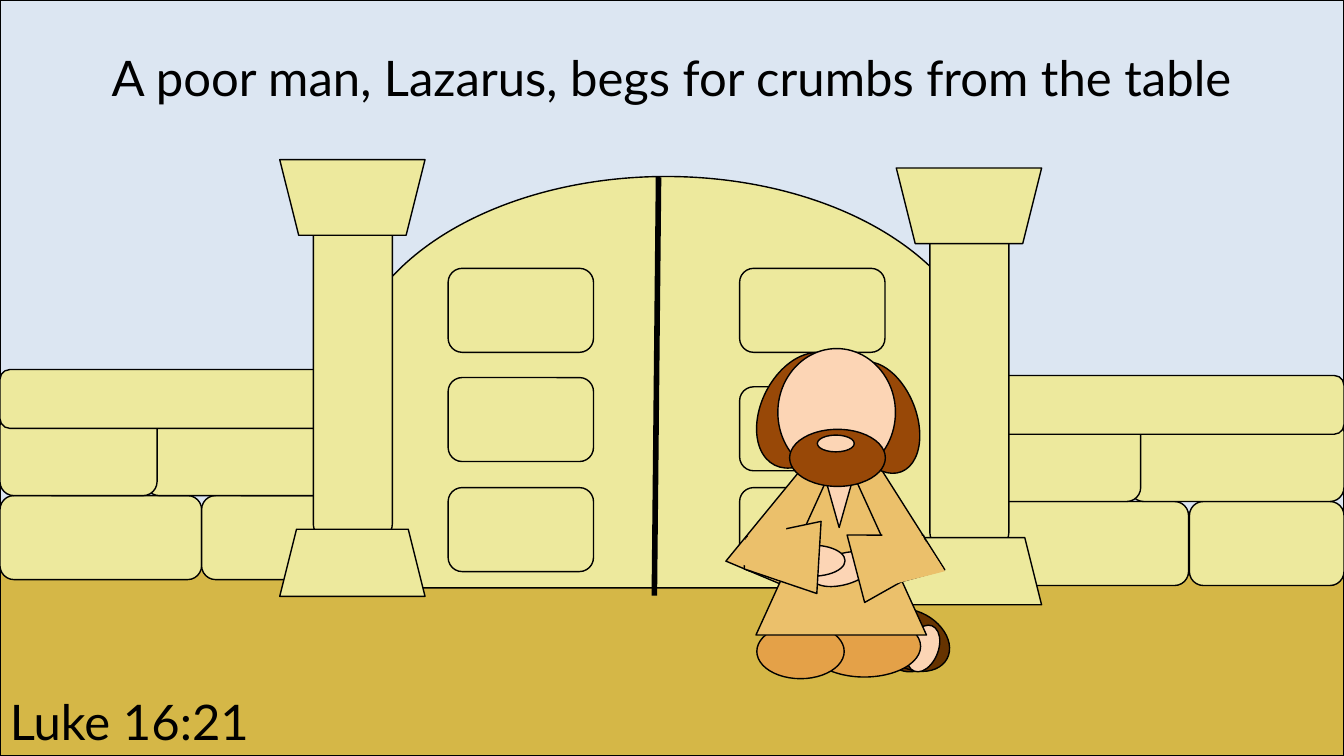
from dataclasses import dataclass

from lxml import etree
from pptx import Presentation
from pptx import util as u
from pptx.dml import color as col
from pptx.enum import shapes as sh, text as tx
from pptx.oxml import ns

COLS, ROWS = 160, 90
KIND = sh.MSO_SHAPE


@dataclass(frozen=True)
class Theme:
    sky: str = "DCE6F2"
    sand: str = "D5B747"
    stone: str = "EDE99D"
    ink: str = "000000"
    skin: str = "FCD5B5"
    robe: str = "EBC06B"
    knee: str = "E4A148"
    hair: str = "984807"
    shoe: str = "663300"
    font: str = "Lato"
    size: float = 35
    thin: float = 1
    thick: float = 4


class Scene:
    def __init__(self, deck, theme):
        self.theme = theme
        self.slide = deck.slides.add_slide(deck.slide_layouts[5])
        self.cell_w = deck.slide_width / COLS
        self.cell_h = deck.slide_height / ROWS
        self.layer = self.slide.shapes

    def spot(self, x, y):
        return u.Emu(round(x * self.cell_w)), u.Emu(round(y * self.cell_h))

    def box(self, x, y, w, h):
        return self.spot(x, y) + self.spot(w, h)

    def ink(self, line, width):
        line.color.rgb = col.RGBColor.from_string(self.theme.ink)
        line.width = u.Pt(width)

    def shape(self, kind, area, fill, turn=0, adjust=None, edge=True):
        item = self.layer.add_shape(kind, *self.box(*area))
        item.shadow.inherit = False
        item.rotation = turn
        item.fill.solid()
        item.fill.fore_color.rgb = col.RGBColor.from_string(fill)
        if adjust is not None:
            item.adjustments[0] = adjust
        if edge:
            self.ink(item.line, self.theme.thin)
        else:
            item.line.fill.background()

    def line(self, start, end):
        item = self.layer.add_connector(
            sh.MSO_CONNECTOR.STRAIGHT, *self.spot(*start), *self.spot(*end))
        self.ink(item.line, self.theme.thick)
        etree.SubElement(item._element.spPr, ns.qn("a:effectLst"))

    def label(self, item, words, align):
        frame = item.text_frame
        frame.text = words
        frame.word_wrap = True
        frame.auto_size = tx.MSO_AUTO_SIZE.NONE
        frame.vertical_anchor = tx.MSO_ANCHOR.TOP
        para = frame.paragraphs[0]
        para.alignment = align
        font = para.runs[0].font
        font.name = self.theme.font
        font.size = u.Pt(self.theme.size)
        font.color.rgb = col.RGBColor.from_string(self.theme.ink)

    def title(self, area, words):
        item = self.slide.shapes.title
        item.left, item.top, item.width, item.height = self.box(*area)
        self.label(item, words, tx.PP_ALIGN.CENTER)
        self.slide.shapes._spTree.append(item._element)

    def text(self, area, words):
        item = self.layer.add_textbox(*self.box(*area))
        self.label(item, words, tx.PP_ALIGN.LEFT)

    def group(self):
        self.layer = self.slide.shapes.add_group_shape().shapes


def draw_gate(scene):
    theme = scene.theme
    scene.shape(KIND.RECTANGLE, (0, 0, COLS, 65), theme.sky)
    scene.shape(KIND.RECTANGLE, (0, 65, COLS, 25), theme.sand)
    scene.shape(KIND.FLOWCHART_DELAY, (54.8, 7.5, 49, 76), theme.stone, 270)

    walls = [
        (44, [(0, 24, 15), (24, 17.3, 15), (17.3, 24, 5),
              (0, 18.7, 5), (0, 41.3, 0)]),
        (44.7, [(116, 25.5, 15), (141.6, 18.4, 15), (134.5, 25.5, 5),
                (116, 19.8, 5), (116, 44, 0)]),
    ]
    for top, bricks in walls:
        for left, width, drop in bricks:
            height = 10 if drop else 7
            scene.shape(KIND.ROUNDED_RECTANGLE,
                        (left, top + drop, width, height), theme.stone)

    for left, top in [(33.3, 19), (106.7, 20)]:
        scene.shape(KIND.ROUNDED_RECTANGLE,
                    (left - 10.3, top + 21.3, 38, 9.4), theme.stone, 90)
        scene.shape(KIND.TRAPEZOID, (left, top, 17.3, 9), theme.stone, 180)
        scene.shape(KIND.TRAPEZOID, (left, top + 44, 17.3, 8), theme.stone)

    for left, tops in [(57, (28.3, 41.3, 54.4)), (91.7, (28.3, 42.4, 54.4))]:
        for top in tops:
            scene.shape(KIND.ROUNDED_RECTANGLE,
                        (left, top, 10, 17.3), theme.stone, 90)
    scene.line((78.4, 21.1), (77.9, 70.9))


def draw_man(scene):
    theme = scene.theme
    oval, cone, cloth = KIND.OVAL, KIND.ISOSCELES_TRIANGLE, KIND.TRAPEZOID
    parts = [
        (oval, (104.9, 73.1, 7, 6.8), theme.shoe, 298.2),
        (oval, (105.2, 71.5, 6.8, 9.4), theme.shoe, 298.2),
        (oval, (107, 75.4, 5.8, 3.6), theme.skin, 291.5),
        (cloth, (88.8, 55, 13, 14.9), theme.robe, 22.8, 0.34),
        (cloth, (97.1, 54.7, 13.6, 15.2), theme.robe, 344.6, 0.34),
        (oval, (96.2, 73.3, 13.4, 7.3), theme.knee),
        (oval, (90.1, 74.3, 10.4, 6.5), theme.knee),
        (cone, (90, 53.3, 20.3, 22.3), theme.robe),
        (oval, (97.8, 45.4, 13.9, 8.6), theme.hair, 68.3),
        (oval, (88.2, 44, 14.6, 9.7), theme.hair, 116.7),
        (oval, (96.5, 65.9, 7.8, 3.7), theme.skin, 343.8),
        (oval, (92.8, 64.9, 7.8, 3.7), theme.skin),
        (cone, (96.8, 51.8, 6.2, 11), theme.skin, 180),
        (oval, (92.6, 41.5, 14, 15.2), theme.skin),
        (cloth, (88.8, 61.7, 8.6, 8.8), theme.robe, 273.4, 0.28),
        (cloth, (102, 62.2, 8.3, 8.8), theme.robe, 75.4, 0.28),
        (cloth, (88.1, 60.5, 6.5, 7.6), theme.robe, 22.8, 0.34, False),
        (cloth, (103.6, 62.5, 8.2, 6.6), theme.robe, 345.9, 0.34, False),
        (oval, (94, 51.1, 11.4, 6.8), theme.hair, 180),
        (oval, (97.3, 51.8, 4.4, 2), theme.skin),
    ]
    scene.group()
    for part in parts:
        scene.shape(*part)


def main():
    deck = Presentation()
    deck.slide_width = u.Inches(13.33)
    deck.slide_height = u.Inches(7.5)
    scene = Scene(deck, Theme())
    draw_gate(scene)
    scene.title((0, 5, COLS, 15.4),
                "A poor man, Lazarus, begs for crumbs from the table")
    scene.text((0, 81.7, COLS, 8.3), "Luke 16:21")
    draw_man(scene)
    deck.save("out.pptx")


if __name__ == "__main__":
    main()
